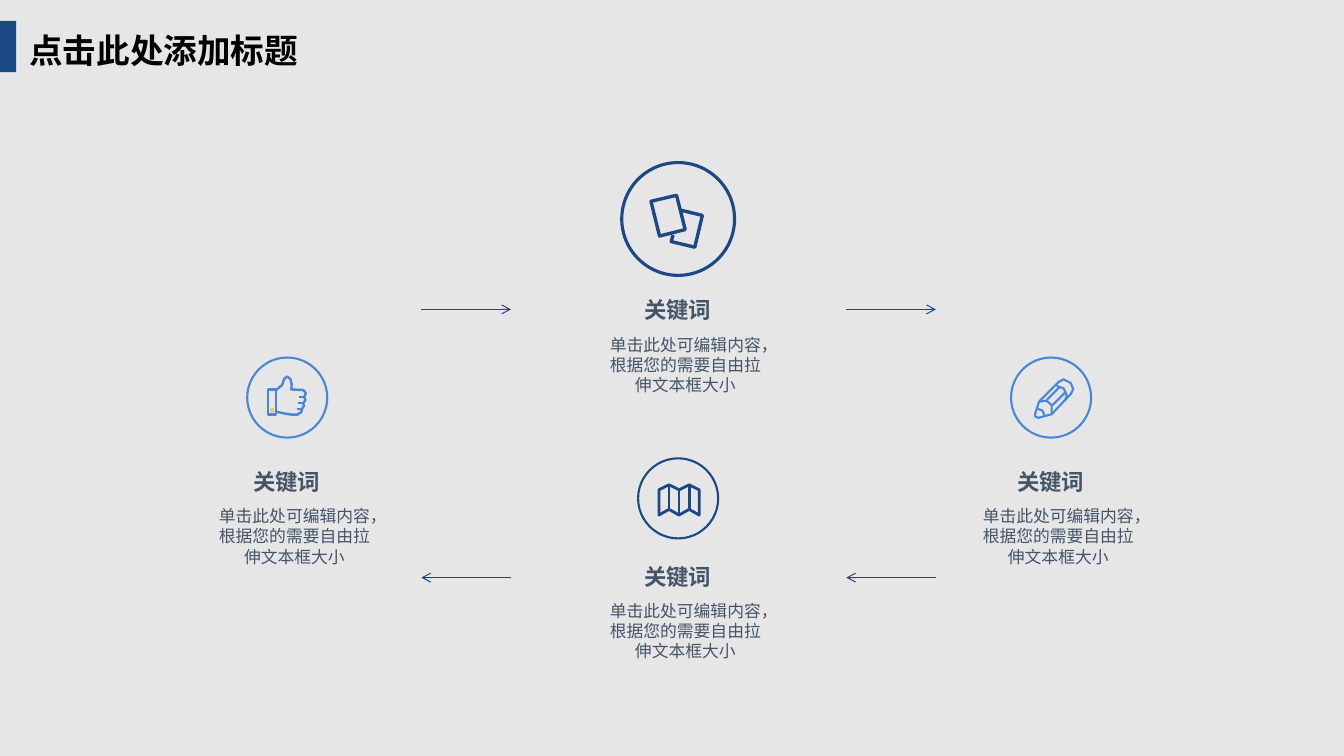
"""Build a four-step cycle slide with line icons, keywords and arrows."""
import pptx
import pptx.util
import pptx.dml.color
import pptx.enum.shapes
import pptx.enum.text
import pptx.oxml
import pptx.oxml.ns

Pt = pptx.util.Pt
RGB = pptx.dml.color.RGBColor.from_string
SHAPE = pptx.enum.shapes.MSO_SHAPE
ALIGN = pptx.enum.text.PP_ALIGN
ANCHOR = pptx.enum.text.MSO_ANCHOR
COLORS = {"bg": "E7E6E6", "navy": "1C4885", "blue": "4886D8",
          "orange": "FDB817", "slate": "445469", "black": "000000"}


def outline(sp, color, width):
    sp.shadow.inherit = False
    sp.fill.background()
    sp.line.color.rgb = RGB(COLORS[color])
    sp.line.width = Pt(width)


def write(sp, box, text, font, color, align, anchor, inset=(0, 0, 0, 0)):
    sp.left, sp.top, sp.width, sp.height = map(Pt, box)
    tf = sp.text_frame
    margins = zip(("margin_left", "margin_top", "margin_right", "margin_bottom"), map(Pt, inset))
    for name, value in {"word_wrap": True, "vertical_anchor": anchor, **dict(margins)}.items():
        setattr(tf, name, value)
    p = tf.paragraphs[0]
    p.alignment = align
    r = p.add_run()
    r.text = text
    for name, value in font.items():
        setattr(r.font, name, value)
    r.font.color.rgb = RGB(COLORS[color])
    ea = pptx.oxml.parse_xml(f'<a:ea {pptx.oxml.ns.nsdecls("a")} typeface="{font["name"]}"/>')
    r.font._element.append(ea)


prs = pptx.Presentation()
prs.slide_width, prs.slide_height = Pt(960), Pt(540)
s = prs.slides.add_slide(prs.slide_layouts[5])
s.background.fill.solid()
s.background.fill.fore_color.rgb = RGB(COLORS["bg"])

write(s.shapes.title, (13.7, 17.3, 208, 36.7), "点击此处添加标题",
      {"name": "Noto Sans CJK SC", "size": Pt(24), "bold": True},
      "black", ALIGN.LEFT, ANCHOR.MIDDLE, (7.2, 3.6, 7.2, 3.6))
bar = s.shapes.add_shape(SHAPE.RECTANGLE, 0, Pt(15), Pt(11.5), Pt(36.5))
bar.shadow.inherit = False
bar.fill.solid()
bar.fill.fore_color.rgb = RGB(COLORS["navy"])
bar.line.fill.background()

thumb = [
    ([(-13.7, -5.8), (-7.9, -5.8), (-7.9, 12.2), (-13.7, 12.2)], True),
    ([(-7.9, -5.4), (-3.6, -9), (-2.2, -13.3), (0, -15.1), (2.2, -13.3), (3.2, -9.7),
      (2.9, -5.8), (11.5, -5.4), (13.3, -3.2), (12.2, -0.4), (13, 1.8), (11.5, 4),
      (11.9, 6.1), (10.4, 8.3), (10.1, 10.4), (7.2, 12.2), (2.9, 12.2), (-2.9, 11.2),
      (-7.9, 10.1)], False),
    *[([(x, y), (x + 4, y)], False) for x, y in ((8.3, -0.4), (7.6, 4), (7, 8.3))],
]
folds = [(-13.7 + 7.2 * i, -9.7 if i % 2 else -6.1, 7.9 if i % 2 else 11.9) for i in range(5)]
folded_map = [
    ([(x, top) for x, top, _ in folds] + [(x, low) for x, _, low in reversed(folds)], True),
    *[([(x, top), (x, low)], False) for x, top, low in folds[1:-1]],
]
cards = [
    ([(-19.4, -12.6), (-1.1, -16.9), (5, 7.6), (-13.3, 12.2)], True),
    ([(2.5, -6.1), (17.3, -2.5), (11.9, 20.2), (-5, 16.2), (-3.6, 11.5)], False),
]
pencil = [
    ([(-11.5, 11.9), (-8.6, 2.9), (5.4, -11.2), (9, -13), (14, -10.4), (15.8, -6.1),
      (14, -2.5), (0.4, 11.9), (-9, 14.4), (-11.2, 13.7)], True),
    ([(4, -8.3), (9, -6.5), (11.2, -1.8), (10.4, 1.1)], False),
    ([(-7.9, 2.9), (-3.2, 2.2), (0.4, 5.4), (0.4, 11.2)], False),
    ([(-3.2, 1.8), (6.1, -7.6)], False),
    ([(1.1, 5.4), (10.4, -4)], False),
    ([(-9.7, 7.9), (-6.1, 9.4), (-4.7, 12.6)], False),
]
steps = [
    (205.2, 284, 57.2, "blue", 1.5, thumb, 1.7, 334),
    (484.4, 356, 57.2, "navy", 1.5, folded_map, 2, 401.8),
    (484.4, 156.4, 80.6, "navy", 2.25, cards, 2.4, 211.7),
    (750.8, 284, 57.2, "blue", 1.5, pencil, 1.5, 334),
]
body_font = {"name": "Arial", "size": Pt(12)}
keyword_font = {"name": "Arial", "size": Pt(16), "bold": True}
for x, y, size, color, ring, icon, stroke, top in steps:
    circle = s.shapes.add_shape(SHAPE.OVAL, Pt(x - size / 2), Pt(y - size / 2), Pt(size), Pt(size))
    outline(circle, color, ring)
    for points, closed in icon:
        spots = [(Pt(x + dx), Pt(y + dy)) for dx, dy in points]
        builder = s.shapes.build_freeform(*spots[0])
        builder.add_line_segments(spots[1:], close=closed)
        outline(builder.convert_to_shape(), color, stroke)
    write(s.shapes.add_textbox(0, 0, 0, 0), (x - 92.5, top, 184.3, 19.4), "关键词",
          keyword_font, "slate", ALIGN.CENTER, ANCHOR.MIDDLE)
    write(s.shapes.add_textbox(0, 0, 0, 0), (x - 49.2, top + 27.4, 108.7, 43.9),
          "单击此处可编辑内容，根据您的需要自由拉伸文本框大小",
          body_font, "slate", ALIGN.CENTER, ANCHOR.TOP)

dot = s.shapes.add_shape(SHAPE.OVAL, Pt(193.3), Pt(291.9), Pt(2.2), Pt(2.2))
outline(dot, "orange", 0.7)

for x1, x2, y in ((301, 365, 221), (604.5, 668.5, 221), (365, 301, 412.6), (668.5, 604.5, 412.6)):
    arrow = s.shapes.add_connector(pptx.enum.shapes.MSO_CONNECTOR.STRAIGHT,
                                   Pt(x1), Pt(y), Pt(x2), Pt(y))
    arrow.line.color.rgb = RGB(COLORS["navy"])
    arrow.line.width = Pt(0.75)
    ns = pptx.oxml.ns.nsdecls("a")
    arrow.line._get_or_add_ln().append(pptx.oxml.parse_xml(f'<a:tailEnd {ns} type="arrow"/>'))
    arrow._element.spPr.append(pptx.oxml.parse_xml(f"<a:effectLst {ns}/>"))

prs.save("out.pptx")
